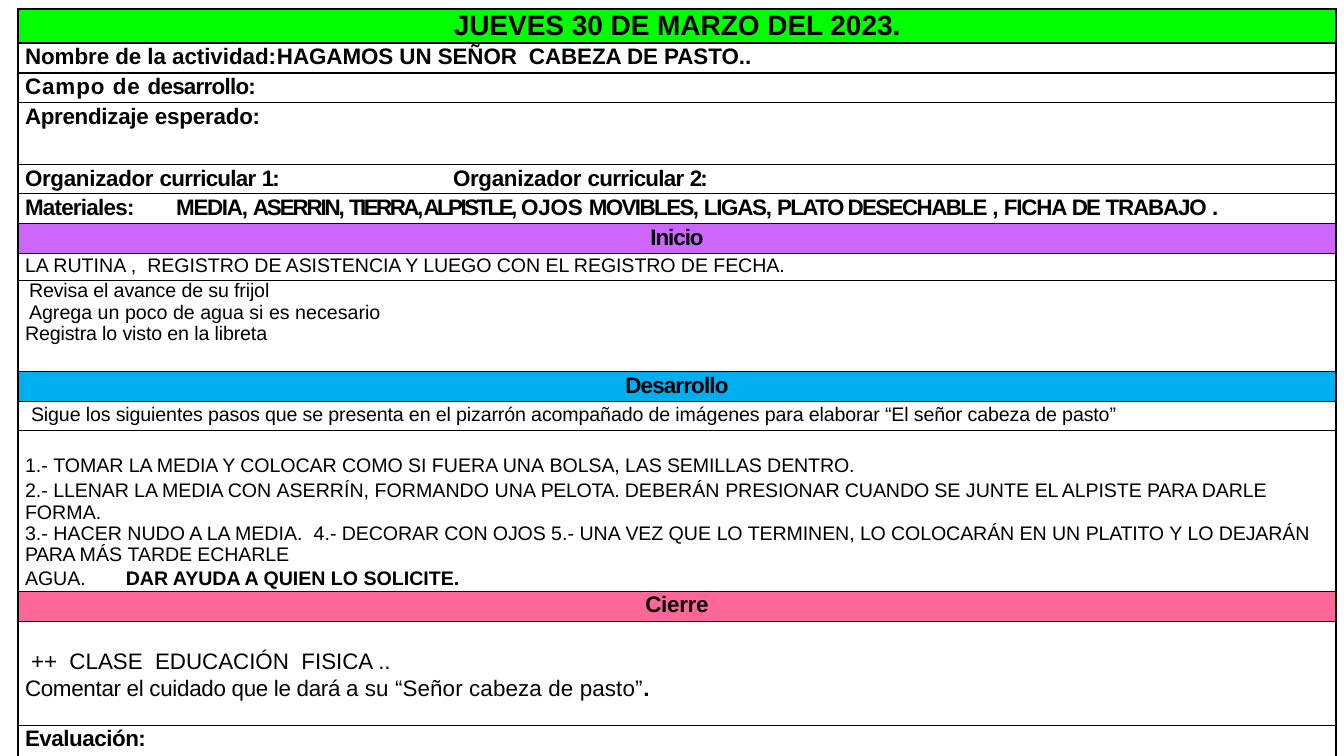
from dataclasses import dataclass
from typing import NamedTuple

from lxml.etree import SubElement
from pptx import Presentation
from pptx.dml.color import RGBColor
from pptx.enum.text import PP_ALIGN
from pptx.oxml.ns import qn
from pptx.util import Emu, Pt

EMU_PER_PX = 9071.43


@dataclass(frozen=True)
class Theme:
    font: str = "Arial"
    ink: str = "000000"
    date: str = "00FF00"
    opening: str = "CC66FF"
    development: str = "00AFEF"
    closing: str = "FF6699"
    title: int = 20
    label: int = 16
    body: int = 14
    spacer: int = 10
    border_pt: int = 1


THEME = Theme()


class Run(NamedTuple):
    text: str
    spacing: int = 0  # hundredths of a point
    bold: bool = False


class Para(NamedTuple):
    runs: list[Run]
    size: int = THEME.body
    indent: int = 7
    line: float | None = 15.3
    before: float = 0
    tabs: tuple[int, ...] = ()
    align: PP_ALIGN = PP_ALIGN.LEFT


class Cell(NamedTuple):
    paras: list[Para]
    edges: str = "LRTB"
    fill: str | None = None
    top: int = 0


class Row(NamedTuple):
    height: int
    cells: list[Cell]


def px(n: float) -> Emu:
    return Emu(round(n * EMU_PER_PX))


def label(*parts: tuple[str, int], indent: int = 7, tabs: tuple[int, ...] = ()) -> Para:
    return Para([Run(text, spacing, True) for text, spacing in parts],
                THEME.label, indent, 18.6, tabs=tabs)


def banner(text: str, fill: str, spacing: int, height: int = 30,
           size: int = THEME.label, line: float = 18.6) -> Row:
    """A coloured full-width heading row."""
    para = Para([Run(text, spacing, True)], size, 0, line, align=PP_ALIGN.CENTER)
    return Row(height, [Cell([para], fill=fill)])


def wide(height: int, *paras: Para, edges: str = "LRTB", top: int = 0) -> Row:
    """A row whose columns are merged."""
    return Row(height, [Cell(list(paras), edges, top=top)])


ROWS = [
    banner("JUEVES 30 DE MARZO DEL 2023.", THEME.date, -5, 34, THEME.title, 23.3),
    wide(30, label(("Nombre de la actividad:\tHAGAMOS UN SEÑOR\tCABEZA DE PASTO..", -3),
                   tabs=(293, 545))),
    wide(30, label(("Campo ", 70), ("de ", 60), ("desarrollo:", -50))),
    wide(62, label(("Aprendizaje ", -20), ("esperado:", -10))),
    Row(29, [
        Cell([label(("Organizador ", -20), ("curricular ", -50), ("1:", -140))], "LTB"),
        Cell([label(("Organizador ", -20), ("curricular ", -50), ("2:", -140),
                    indent=79)], "RTB"),
    ]),
    wide(30, label(("Materiales:\t", -50), ("MEDIA, ", -90), ("ASERRIN, ", -150),
                   ("TIERRA, ALPISTLE, ", -180), ("OJOS ", -10), ("MOVIBLES, ", -110),
                   ("LIGAS, ", -90), ("PLATO DESECHABLE ", -110), (", ", -60),
                   ("FICHA ", -80), ("DE ", -130), ("TRABAJO ", -80), (".", -60),
                   tabs=(145,))),
    banner("Inicio", THEME.opening, -70),
    wide(27, Para([Run("LA RUTINA ,"), Run(" ", 390),
                   Run("REGISTRO DE ASISTENCIA Y LUEGO CON EL REGISTRO DE FECHA.", -8)],
                  line=16.2)),
    wide(43, Para([Run("Revisa el avance de su frijol", -10)], indent=11),
         Para([Run("Agrega un poco de agua si es necesario")], indent=11), edges="LR"),
    wide(25, Para([Run("Registra lo visto en la libreta", -10)]), edges="LR"),
    wide(23, edges="LRB"),
    banner("Desarrollo", THEME.development, -60),
    wide(29, Para([Run("Sigue los siguientes pasos que se presenta en el pizarrón "
                       "acompañado de imágenes para elaborar “El señor cabeza de pasto”",
                       -10)], indent=13, line=None), top=2),
    wide(25, edges="LR"),
    wide(25, Para([Run("1.- "), Run("TOMAR LA MEDIA Y COLOCAR COMO SI ", -8),
                   Run("FUERA UNA"), Run(" BOLSA, LAS SEMILLAS DENTRO.", -10)],
                  line=15.2), edges="LR"),
    wide(43, Para([Run("2.- "), Run("LLENAR LA MEDIA CON ", -10),
                   Run("ASERRÍN, FORMANDO UNA "), Run("PELOTA. ", -30), Run("DEBERÁN "),
                   Run("PRESIONAR CUANDO SE", -10), Run(" JUNTE "),
                   Run("EL ALPISTE ", -10), Run("PARA ", -30), Run("DARLE ", -10),
                   Run("FORMA.")]), edges="LR"),
    wide(43, Para([Run("3.- "), Run("HACER NUDO A LA MEDIA.", -3), Run(" ", 390),
                   Run("4.-"), Run(" DECORAR CON OJOS ", -10), Run("5.- UNA "),
                   Run("VEZ ", -10), Run("QUE "), Run("LO ", -20),
                   Run("TERMINEN, ", -10), Run("LO ", -20), Run("COLOCARÁN EN ", -10),
                   Run("UN "), Run("PLATITO ", -20), Run("Y "), Run("LO ", -20),
                   Run("DEJARÁN ", -10), Run("PARA ", -30), Run("MÁS "),
                   Run("TARDE ECHARLE", -10)], line=15.2), edges="LR"),
    wide(25, Para([Run("AGUA.\t", -5), Run("DAR AYUDA A QUIEN LO SOLICITE.", -3, True)],
                  line=16.4, tabs=(103,)), edges="LRB"),
    banner("Cierre", THEME.closing, -20),
    wide(104,
         Para([Run("++"), Run(" ", 440), Run("CLASE"), Run(" ", 440),
               Run("EDUCACIÓN"), Run(" ", 440), Run("FISICA ..")],
              THEME.label, 13, None),
         Para([Run("Comentar el cuidado que le dará a ", -20),
               Run("su “Señor cabeza de pasto”", 10), Run(".", 10, True)],
              THEME.label, 7, None, 1.4), top=28),
    wide(61, label(("Evaluación:", -30))),
]


def write_para(p, para: Para) -> None:
    pPr = p._p.get_or_add_pPr()
    pPr.set("marL", str(px(para.indent)))
    pPr.set("indent", "0")
    if para.tabs:
        tab_list = SubElement(pPr, qn("a:tabLst"))
        for stop in para.tabs:
            SubElement(tab_list, qn("a:tab"), pos=str(px(stop)), algn="l")
    p.alignment = para.align
    if para.line:
        p.line_spacing = Pt(para.line)
    if para.before:
        p.space_before = Pt(para.before)
    for run in para.runs:
        r = p.add_run()
        r.text = run.text
        r.font.name = THEME.font
        r.font.size = Pt(para.size)
        r.font.bold = run.bold
        r.font.color.rgb = RGBColor.from_string(THEME.ink)
        r._r.get_or_add_rPr().set("spc", str(run.spacing))


def draw_edges(target, edges: str) -> None:
    tcPr = target._tc.get_or_add_tcPr()
    for side in edges:
        ln = SubElement(tcPr, qn(f"a:ln{side}"), w=str(Pt(THEME.border_pt)))
        fill = SubElement(ln, qn("a:solidFill"))
        SubElement(fill, qn("a:srgbClr"), val=THEME.ink)


def write_cell(target, cell: Cell) -> None:
    target.margin_left = target.margin_right = target.margin_bottom = 0
    target.margin_top = px(cell.top)
    draw_edges(target, cell.edges)
    if cell.fill:
        target.fill.solid()
        target.fill.fore_color.rgb = RGBColor.from_string(cell.fill)
    else:
        target.fill.background()
    tf = target.text_frame
    for i, para in enumerate(cell.paras):
        write_para(tf.add_paragraph() if i else tf.paragraphs[0], para)
    if not cell.paras:
        SubElement(tf.paragraphs[0]._p, qn("a:endParaRPr"), sz=str(THEME.spacer * 100))


def main() -> None:
    prs = Presentation()
    prs.slide_width, prs.slide_height = px(1344), px(756)
    s = prs.slides.add_slide(prs.slide_layouts[6])
    columns = (356, 962)
    height = sum(row.height for row in ROWS)
    frame = s.shapes.add_table(len(ROWS), len(columns), px(18), px(9),
                               px(sum(columns)), px(height))
    table = frame.table
    table.first_row = table.horz_banding = False
    style = table._tbl.tblPr.find(qn("a:tableStyleId"))
    style.text = "{2D5ABB26-0587-4C30-8999-92F81FD0307C}"  # no style, no grid
    for column, width in zip(table.columns, columns):
        column.width = px(width)
    for i, row in enumerate(ROWS):
        table.rows[i].height = px(row.height)
        if len(row.cells) == 1:
            table.cell(i, 0).merge(table.cell(i, 1))
            draw_edges(table.cell(i, 1), row.cells[0].edges.replace("L", ""))
        for j, cell in enumerate(row.cells):
            write_cell(table.cell(i, j), cell)
    prs.save("out.pptx")


if __name__ == "__main__":
    main()
